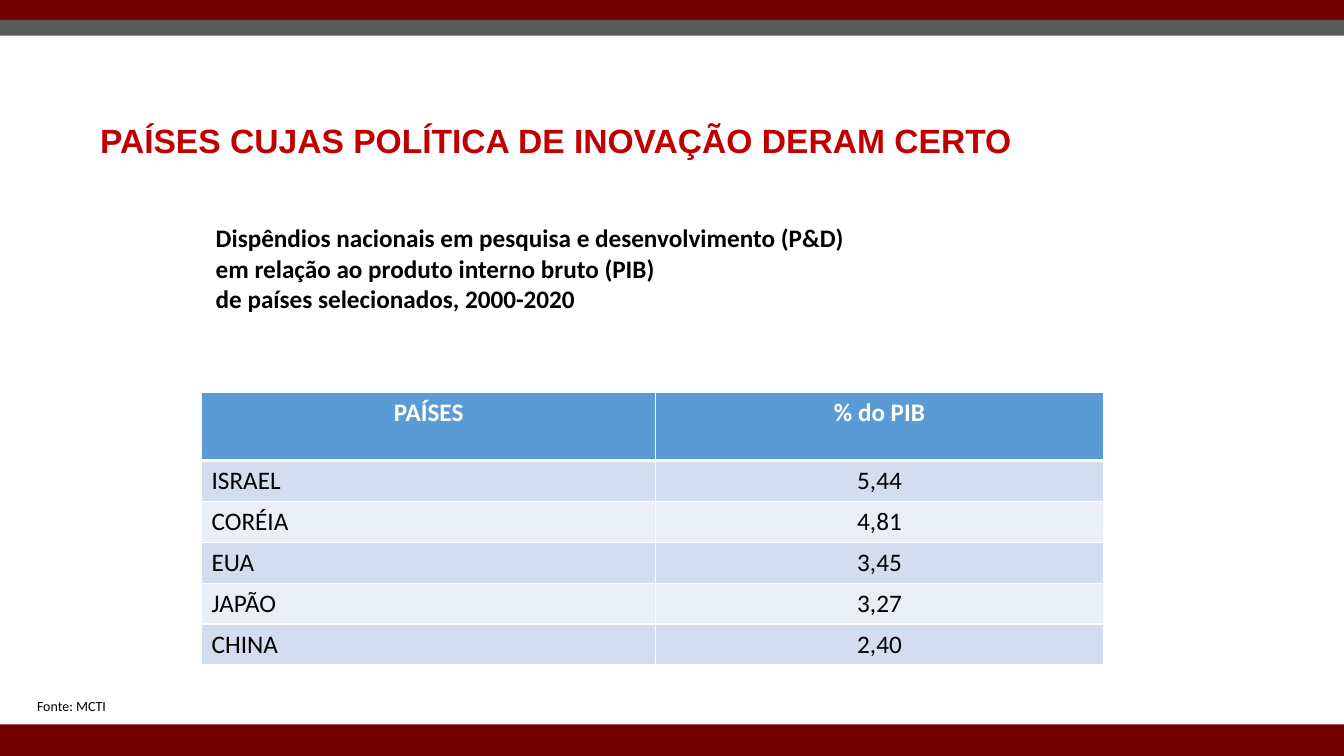
import pptx
import pptx.util
import pptx.dml.color
import pptx.enum.shapes
import pptx.enum.text
import pptx.oxml
import pptx.oxml.ns

Pt = pptx.util.Pt
ALIGN = pptx.enum.text.PP_ALIGN
ANCHOR = pptx.enum.text.MSO_ANCHOR

COLORS = {
    "wine": "740000", "gray": "595959", "red": "C00000", "black": "000000",
    "white": "FFFFFF", "header": "5B9BD5", "odd": "D2DEEF", "even": "EAEFF7",
}
SLIDE_W, SLIDE_H = 960, 540
BANDS = [
    (0, 18, "wine"),
    (517.5, 22.5, "wine"),
    (14.2, 11.3, "gray"),
]
TITLE = "PAÍSES CUJAS POLÍTICA DE INOVAÇÃO DERAM CERTO"
TITLE_BOX = (50.4, 82, 693.4, 65.5)
TEXTS = [
    ("Dispêndios nacionais em pesquisa e desenvolvimento (P&D) em relação ao "
     "produto interno bruto (PIB)\vde países selecionados, 2000-2020",
     (147, 155.5, 480, 94.5), 18, True),
    ("Fonte: MCTI", (19.4, 494.6, 128, 19.4), 10, False),
]
ROWS = [
    ("PAÍSES", "% do PIB"),
    ("ISRAEL", "5,44"),
    ("CORÉIA", "4,81"),
    ("EUA", "3,45"),
    ("JAPÃO", "3,27"),
    ("CHINA", "2,40"),
]
TABLE_LEFT, TABLE_TOP = 144, 280
COL_WIDTHS = (324.5, 319.5)
HEADER_H, ROW_H = 49, 29.2


def rgb(name):
    return pptx.dml.color.RGBColor.from_string(COLORS[name])


def write(tf, text, size, color="black", bold=False, font="Calibri", align=ALIGN.LEFT):
    tf.text = text
    p = tf.paragraphs[0]
    p.alignment = align
    for r in p.runs:
        for name, value in {"name": font, "size": Pt(size), "bold": bold}.items():
            setattr(r.font, name, value)
        r.font.color.rgb = rgb(color)


def set_borders(cell, bottom, top):
    tc_pr = cell._tc.get_or_add_tcPr()
    sides = {"lnL": 1, "lnR": 1, "lnT": top, "lnB": bottom}
    for i, (tag, width) in enumerate(sides.items()):
        tc_pr.insert(i, pptx.oxml.parse_xml(
            f'<a:{tag} {pptx.oxml.ns.nsdecls("a")} w="{Pt(width)}"><a:solidFill>'
            f'<a:srgbClr val="{COLORS["white"]}"/></a:solidFill></a:{tag}>'))


def add_bands(s):
    for top, height, color in BANDS:
        sp = s.shapes.add_shape(pptx.enum.shapes.MSO_SHAPE.RECTANGLE,
                                0, Pt(top), Pt(SLIDE_W), Pt(height))
        sp.shadow.inherit = False
        sp.fill.solid()
        sp.fill.fore_color.rgb = rgb(color)
        sp.line.fill.background()


def add_title(s):
    sp = s.shapes.title
    for name, value in zip(("left", "top", "width", "height"), TITLE_BOX):
        setattr(sp, name, Pt(value))
    tf = sp.text_frame
    tf.word_wrap = True
    tf.auto_size = pptx.enum.text.MSO_AUTO_SIZE.NONE
    tf.vertical_anchor = ANCHOR.TOP
    write(tf, TITLE, 24, "red", True, "Arial", ALIGN.CENTER)


def add_texts(s):
    for text, box, size, bold in TEXTS:
        tf = s.shapes.add_textbox(*map(Pt, box)).text_frame
        tf.word_wrap = True
        write(tf, text, size, bold=bold)


def add_spending_table(s):
    heights = [HEADER_H] + [ROW_H] * (len(ROWS) - 1)
    table = s.shapes.add_table(
        len(ROWS), len(COL_WIDTHS), Pt(TABLE_LEFT), Pt(TABLE_TOP),
        Pt(sum(COL_WIDTHS)), Pt(sum(heights))).table
    for col, width in zip(table.columns, COL_WIDTHS):
        col.width = Pt(width)
    for i, (values, height) in enumerate(zip(ROWS, heights)):
        table.rows[i].height = Pt(height)
        header = i == 0
        fill = "header" if header else "odd" if i % 2 else "even"
        for j, text in enumerate(values):
            cell = table.cell(i, j)
            cell.fill.solid()
            cell.fill.fore_color.rgb = rgb(fill)
            set_borders(cell, bottom=3 if header else 1, top=3 if i == 1 else 1)
            write(cell.text_frame, text, 18, "white" if header else "black", header,
                  align=ALIGN.CENTER if header or j else ALIGN.LEFT)


def main():
    prs = pptx.Presentation()
    prs.slide_width, prs.slide_height = Pt(SLIDE_W), Pt(SLIDE_H)
    s = prs.slides.add_slide(prs.slide_layouts[5])
    add_bands(s)
    add_title(s)
    add_texts(s)
    add_spending_table(s)
    prs.save("out.pptx")


if __name__ == "__main__":
    main()
